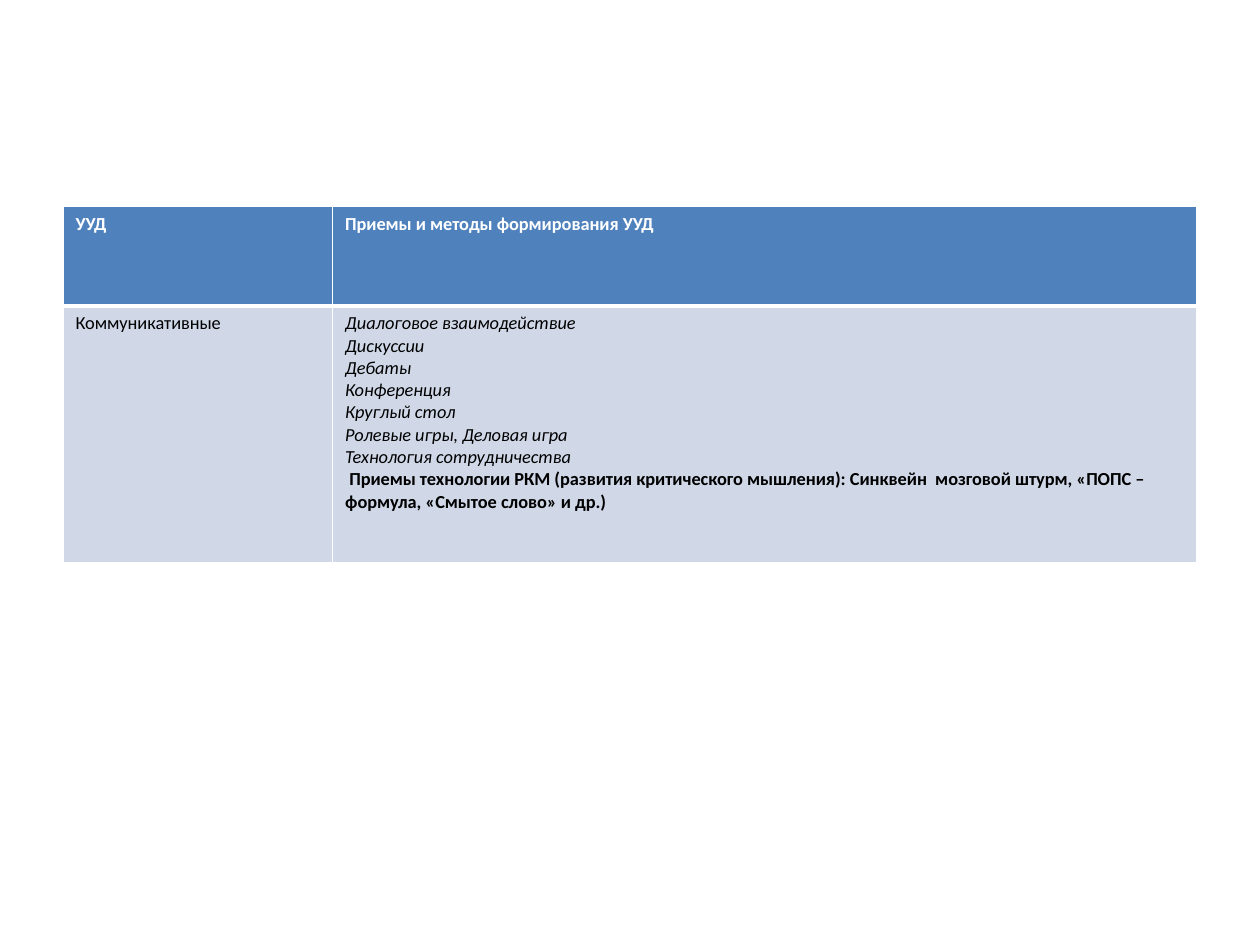
from dataclasses import dataclass

import pptx
import pptx.dml.color
import pptx.oxml
import pptx.oxml.ns
import pptx.table
import pptx.util
from pptx.util import Inches

FONT = "Calibri"
FONT_SIZE = 10.5
WHITE, BLACK = "FFFFFF", "000000"
HEADER_FILL, BODY_FILL = "4F81BD", "D0D8E8"
THIN, THICK = 1, 3
COLUMN_WIDTHS = (2.14, 6.86)
ROW_HEIGHTS = (0.79, 2.04)


@dataclass(frozen=True)
class Line:
    text: str
    bold: bool = False
    italic: bool = False


@dataclass(frozen=True)
class RowStyle:
    fill: str
    text_color: str
    top_border: float
    bottom_border: float


HEADER = RowStyle(HEADER_FILL, WHITE, THIN, THICK)
BODY = RowStyle(BODY_FILL, BLACK, THICK, THIN)

METHODS = (
    "Диалоговое взаимодействие",
    "Дискуссии",
    "Дебаты",
    "Конференция",
    "Круглый стол",
    "Ролевые игры, Деловая игра",
    "Технология сотрудничества",
)
CRITICAL_THINKING = (
    " Приемы технологии РКМ (развития критического мышления): "
    "Синквейн  мозговой штурм, «ПОПС – формула, «Смытое слово» и др.)"
)

ROWS = (
    (HEADER, (
        [Line("УУД", bold=True)],
        [Line("Приемы и методы формирования УУД", bold=True)],
    )),
    (BODY, (
        [Line("Коммуникативные")],
        [Line(method, italic=True) for method in METHODS]
        + [Line(CRITICAL_THINKING, bold=True)],
    )),
)


def rgb(color: str) -> pptx.dml.color.RGBColor:
    return pptx.dml.color.RGBColor.from_string(color)


def set_borders(cell: pptx.table._Cell, style: RowStyle) -> None:
    """Draw white borders; the schema wants them ahead of the cell fill."""
    widths = {"lnL": THIN, "lnR": THIN,
              "lnT": style.top_border, "lnB": style.bottom_border}
    properties = cell._tc.get_or_add_tcPr()
    for index, (tag, width) in enumerate(widths.items()):
        border = pptx.oxml.parse_xml(
            f'<a:{tag} {pptx.oxml.ns.nsdecls("a")} w="{pptx.util.Pt(width)}">'
            f'<a:solidFill><a:srgbClr val="{WHITE}"/></a:solidFill></a:{tag}>'
        )
        properties.insert(index, border)


def fill_cell(cell: pptx.table._Cell, lines: list[Line], style: RowStyle) -> None:
    cell.fill.solid()
    cell.fill.fore_color.rgb = rgb(style.fill)
    set_borders(cell, style)
    cell.text_frame.text = "\n".join(line.text for line in lines)
    for paragraph, line in zip(cell.text_frame.paragraphs, lines):
        for run in paragraph.runs:
            run.font.name = FONT
            run.font.size = pptx.util.Pt(FONT_SIZE)
            run.font.bold = line.bold
            run.font.italic = line.italic
            run.font.color.rgb = rgb(style.text_color)


def main() -> None:
    presentation = pptx.Presentation()
    presentation.slide_width = Inches(10)
    presentation.slide_height = Inches(7.5)
    slide = presentation.slides.add_slide(presentation.slide_layouts[6])

    table = slide.shapes.add_table(
        len(ROWS), len(COLUMN_WIDTHS), Inches(0.5), Inches(1.64),
        Inches(sum(COLUMN_WIDTHS)), Inches(sum(ROW_HEIGHTS)),
    ).table
    for column, width in zip(table.columns, COLUMN_WIDTHS):
        column.width = Inches(width)
    for row, height, (style, contents) in zip(table.rows, ROW_HEIGHTS, ROWS):
        row.height = Inches(height)
        for cell, lines in zip(row.cells, contents):
            fill_cell(cell, lines, style)

    presentation.save("out.pptx")


if __name__ == "__main__":
    main()
